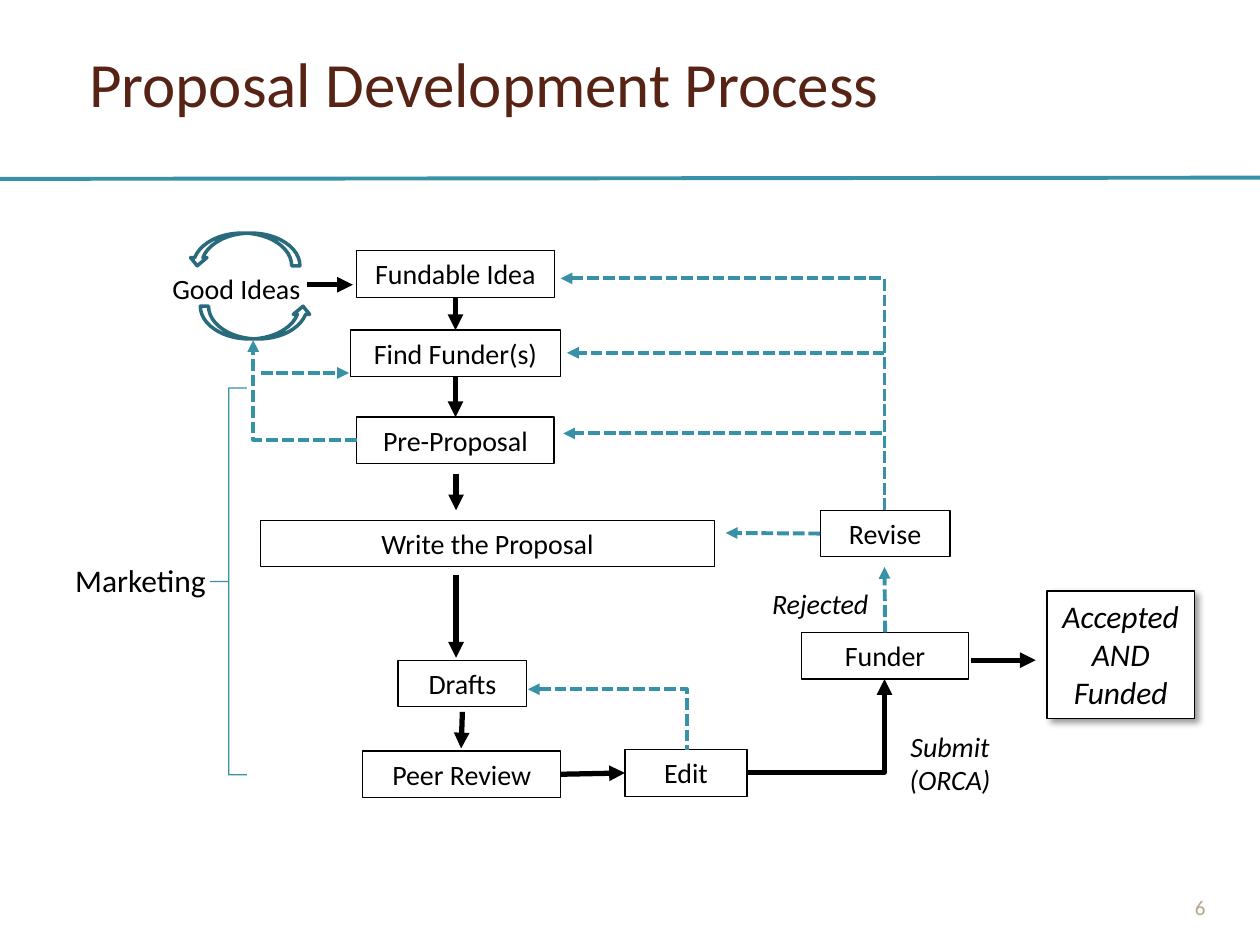
from lxml import etree
from pptx import Presentation
from pptx.dml.color import RGBColor
from pptx.enum.dml import MSO_LINE
from pptx.enum.shapes import MSO_CONNECTOR, MSO_SHAPE
from pptx.enum.text import MSO_ANCHOR, PP_ALIGN
from pptx.oxml import parse_xml
from pptx.oxml.ns import nsdecls, qn
from pptx.util import Inches, Pt

BLACK = RGBColor(0x00, 0x00, 0x00)
WHITE = RGBColor(0xFF, 0xFF, 0xFF)
TEAL = RGBColor(0x38, 0x91, 0xA7)
DEEP = RGBColor(0x29, 0x6B, 0x7C)
BROWN = RGBColor(0x57, 0x23, 0x14)
TAN = RGBColor(0xB5, 0xA7, 0x88)

RECT = MSO_SHAPE.RECTANGLE
CURVE = MSO_SHAPE.CURVED_RIGHT_ARROW
BRACE = MSO_SHAPE.LEFT_BRACE
STRAIGHT = MSO_CONNECTOR.STRAIGHT
ELBOW = MSO_CONNECTOR.ELBOW
DASH = MSO_LINE.SQUARE_DOT
LEFT = PP_ALIGN.LEFT
CENTER = PP_ALIGN.CENTER
TOP = MSO_ANCHOR.TOP
MIDDLE = MSO_ANCHOR.MIDDLE
BOTTOM = MSO_ANCHOR.BOTTOM
T_SIDE, L_SIDE, B_SIDE, R_SIDE = range(4)

SHADOW = (
    f'<a:effectLst {nsdecls("a")}>'
    '<a:outerShdw blurRad="50800" dist="38100" dir="2700000" algn="tl" rotWithShape="0">'
    '<a:srgbClr val="000000"><a:alpha val="40000"/></a:srgbClr>'
    '</a:outerShdw></a:effectLst>'
)

STEPS = [
    ("Fundable Idea", 2.83, 1.99, 1.57, 0.75),
    ("Find Funder(s)", 2.78, 2.62, 1.67, 0.75),
    ("Pre-Proposal", 2.83, 3.31, 1.57, 1),
    ("Write the Proposal", 2.07, 4.13, 3.6, 0.5),
    ("Drafts", 3.16, 5.24, 1.02, 0.75),
    ("Peer Review", 2.88, 5.96, 1.57, 0.75),
    ("Edit", 4.96, 5.95, 0.97, 0.75),
    ("Funder", 6.36, 5.02, 1.33, 0.75),
    ("Revise", 6.51, 4.05, 1.03, 0.75),
]
SOLID = [
    (2.44, 2.26, 2.8, 2.26),
    (3.62, 3.76, 3.62, 4.05),
    (3.62, 4.56, 3.62, 5.22),
    (3.67, 5.65, 3.66, 5.94),
    (7.71, 5.24, 8.22, 5.24),
]
DASHED = [
    (2.07, 2.96, 2.77, 2.96),
    (7.02, 2.8, 4.5, 2.8),
    (7, 3.44, 4.47, 3.44),
]


def write(shape, text, size=16, color=BLACK, italic=False, align=CENTER,
          anchor=TOP, wrap=True):
    frame = shape.text_frame
    frame.word_wrap = wrap
    frame.vertical_anchor = anchor
    para = frame.paragraphs[0]
    para.alignment = align
    run = para.add_run()
    run.text = text
    font = run.font
    font.name = "Calibri"
    font.size = Pt(size)
    font.italic = italic
    font.color.rgb = color


def label(slide, text, x, y, w, h, **style):
    box = slide.shapes.add_textbox(Inches(x), Inches(y), Inches(w), Inches(h))
    write(box, text, **style)


def draw(slide, kind, x, y, w, h, color=BLACK, width=0.75, fill=None):
    shape = slide.shapes.add_shape(kind, Inches(x), Inches(y), Inches(w), Inches(h))
    shape.shadow.inherit = False
    if fill is None:
        shape.fill.background()
    else:
        shape.fill.solid()
        shape.fill.fore_color.rgb = fill
    if color is None:
        shape.line.fill.background()
    else:
        shape.line.color.rgb = color
        shape.line.width = Pt(width)
    return shape


def link(slide, x1, y1, x2, y2, kind=STRAIGHT, color=BLACK, width=3,
         dash=False, tip="tailEnd", start=None, end=None):
    wire = slide.shapes.add_connector(
        kind, Inches(x1), Inches(y1), Inches(x2), Inches(y2))
    wire.line.color.rgb = color
    wire.line.width = Pt(width)
    if dash:
        wire.line.dash_style = DASH
    props = wire._element.spPr
    if kind == ELBOW:
        props.find(qn("a:prstGeom")).set("prst", "bentConnector2")
    if tip:
        etree.SubElement(props.find(qn("a:ln")), qn(f"a:{tip}"), type="triangle")
    etree.SubElement(props, qn("a:effectLst"))
    if start:
        wire.begin_connect(*start)
    if end:
        wire.end_connect(*end)


def ideas(slide):
    for x, y, h, turn in ((1.9, 2.12, 0.88, 270), (1.81, 1.54, 0.88, 90)):
        draw(slide, CURVE, x, y, 0.26, h, color=DEEP, width=2).rotation = turn
    label(slide, "Good Ideas", 1.27, 2.11, 1.34, 0.37, align=LEFT)


def steps(slide):
    boxes = {}
    for name, x, y, w, width in STEPS:
        fill = WHITE if name == "Funder" else None
        boxes[name] = draw(slide, RECT, x, y, w, 0.37, width=width, fill=fill)
        write(boxes[name], name)
    return boxes


def flow(slide, boxes):
    dashed = {"color": TEAL, "width": 2.25, "dash": True}
    find = boxes["Find Funder(s)"]
    for ends in SOLID:
        link(slide, *ends)
    for ends in DASHED:
        link(slide, *ends, **dashed)
    link(slide, 3.62, 2.36, 3.62, 2.62,
         start=(boxes["Fundable Idea"], B_SIDE), end=(find, T_SIDE))
    link(slide, 3.62, 2.99, 3.62, 3.31,
         start=(find, B_SIDE), end=(boxes["Pre-Proposal"], T_SIDE))
    link(slide, 4.45, 6.15, 4.96, 6.15,
         start=(boxes["Peer Review"], R_SIDE), end=(boxes["Edit"], L_SIDE))
    link(slide, 7.02, 5.02, 7.02, 4.5, start=(boxes["Funder"], T_SIDE), **dashed)
    link(slide, 6.51, 4.23, 5.76, 4.23, start=(boxes["Revise"], L_SIDE), **dashed)
    link(slide, 5.93, 6.13, 7.02, 5.39, ELBOW)
    link(slide, 2.83, 3.49, 2.01, 2.7, ELBOW, **dashed)
    link(slide, 4.19, 5.47, 5.45, 5.95, ELBOW, tip="headEnd", **dashed)
    link(slide, 4.45, 2.21, 7.02, 4.05, ELBOW, tip="headEnd", **dashed)


def result(slide):
    submit = draw(slide, RECT, 7.07, 5.74, 0.94, 0.64, color=None, fill=WHITE)
    write(submit, "Submit (ORCA)", italic=True)
    label(slide, "Rejected", 5.66, 4.61, 1.7, 0.37, italic=True)
    done = draw(slide, RECT, 8.31, 4.69, 1.17, 1.01, fill=WHITE)
    write(done, "Accepted AND Funded", size=18, italic=True)
    props = done._element.spPr
    props.replace(props.find(qn("a:effectLst")), parse_xml(SHADOW))


def market(slide):
    label(slide, "Marketing", 0.49, 4.4, 1.25, 0.4, size=18, wrap=False)
    brace = draw(slide, BRACE, 1.67, 3.08, 0.29, 3.07, color=TEAL)
    brace.adjustments[0] = 0
    brace.adjustments[1] = 0.5


def main():
    deck = Presentation()
    deck.slide_width = Inches(10)
    deck.slide_height = Inches(7.5)
    slide = deck.slides.add_slide(deck.slide_layouts[6])
    link(slide, 0, 1.42, 10, 1.41, color=TEAL, width=2.25, tip=None)
    label(slide, "Proposal Development Process", 0.61, 0.15, 9, 1.01,
          size=36, color=BROWN, align=LEFT, anchor=MIDDLE)
    label(slide, "6", 9.3, 6.95, 0.45, 0.4, size=12, color=TAN, anchor=BOTTOM)
    ideas(slide)
    boxes = steps(slide)
    flow(slide, boxes)
    result(slide)
    market(slide)
    deck.save("out.pptx")


if __name__ == "__main__":
    main()
